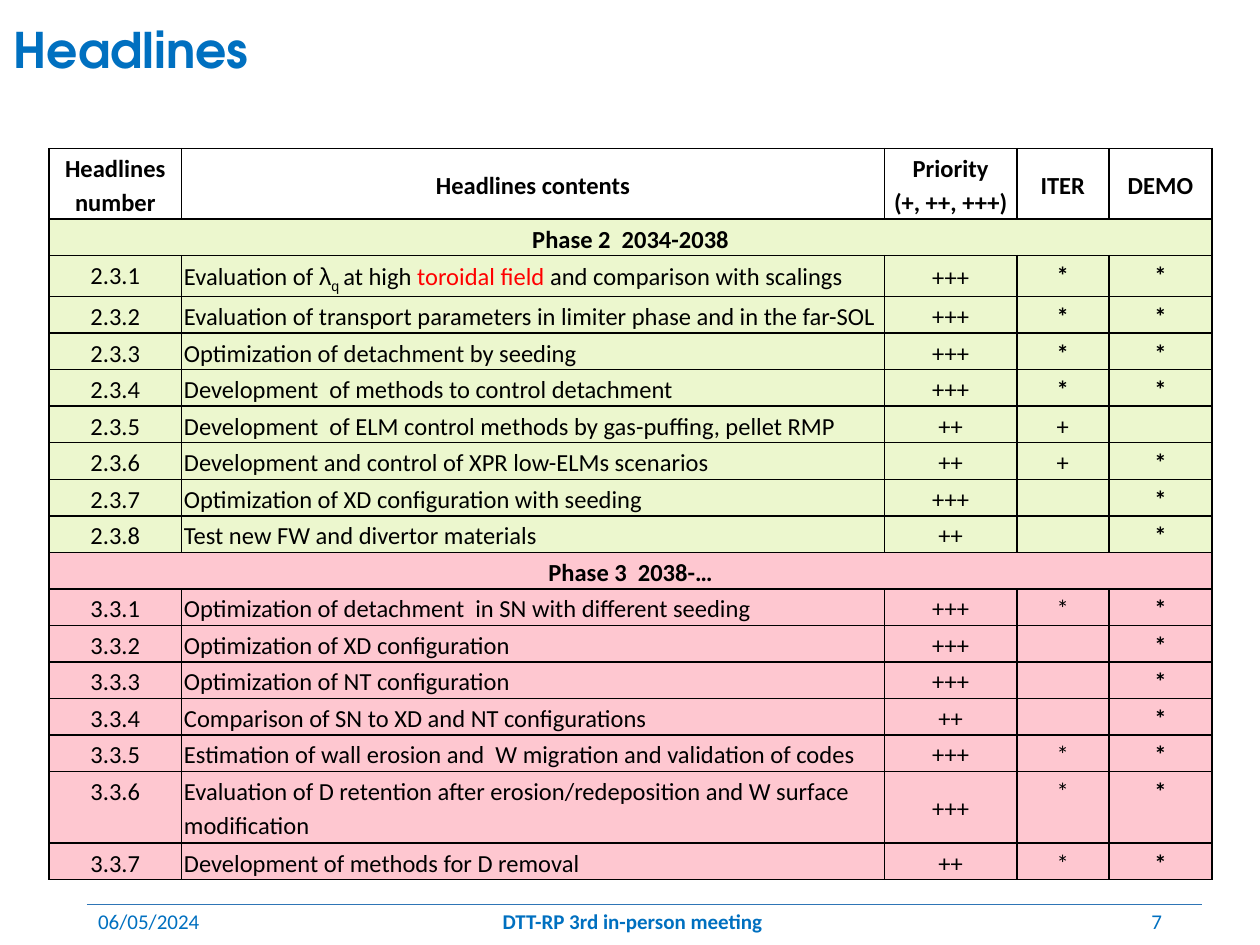
from lxml import etree
from pptx import Presentation
from pptx import util as u
from pptx.dml.color import RGBColor
from pptx.enum import shapes, text
from pptx.oxml import parse_xml
from pptx.oxml.ns import nsdecls, qn

BLUE, RULE, RED, BLACK = "0070C0", "2E75B6", "FF0000", "000000"
GREEN, PINK = "ECF7CE", "FEC7D0"
LEFT, CENTER, RIGHT = (text.PP_ALIGN.LEFT, text.PP_ALIGN.CENTER,
                       text.PP_ALIGN.RIGHT)
TOP, MIDDLE = text.MSO_ANCHOR.TOP, text.MSO_ANCHOR.MIDDLE

HEADINGS = ["Headlines\nnumber", "Headlines contents",
            "Priority\n(+, ++, +++)", "ITER", "DEMO"]
COLUMN_WIDTHS = [1.05, 5.58, 1.05, 0.73, 0.82]
ROW_HEIGHT = 0.29
TALL_ROWS = {"Headlines\nnumber": 0.56, "2.3.1": 0.32, "3.3.6": 0.57}

# Spans are (text, format overrides)
LAMBDA_Q = [
    ("Evaluation of ", {}), ("λ", {"name": "Arial"}),
    ("q ", {"name": "Arial", "baseline": "-25000"}), ("at high", {}),
    (" toroidal field", {"color": RED}),
    (" and comparison with scalings", {})]

# Phase title, fill, whether ITER stars are bold, rows
PHASES = [
    ("Phase 2  2034-2038", GREEN, True, [
        ("2.3.1", LAMBDA_Q, "+++", "*", "*"),
        ("2.3.2", "Evaluation of transport parameters in limiter phase "
                  "and in the far-SOL", "+++", "*", "*"),
        ("2.3.3", "Optimization of detachment by seeding", "+++", "*", "*"),
        ("2.3.4", "Development  of methods to control detachment",
         "+++", "*", "*"),
        ("2.3.5", "Development  of ELM control methods by gas-puffing, "
                  "pellet RMP", "++", "+", ""),
        ("2.3.6", "Development and control of XPR low-ELMs scenarios",
         "++", "+", "*"),
        ("2.3.7", "Optimization of XD configuration with seeding",
         "+++", "", "*"),
        ("2.3.8", "Test new FW and divertor materials", "++", "", "*")]),
    ("Phase 3  2038-…", PINK, False, [
        ("3.3.1", "Optimization of detachment  in SN with different seeding",
         "+++", "*", "*"),
        ("3.3.2", "Optimization of XD configuration", "+++", "", "*"),
        ("3.3.3", "Optimization of NT configuration", "+++", "", "*"),
        ("3.3.4", "Comparison of SN to XD and NT configurations",
         "++", "", "*"),
        ("3.3.5", "Estimation of wall erosion and  W migration and "
                  "validation of codes", "+++", "*", "*"),
        ("3.3.6", "Evaluation of D retention after erosion/redeposition "
                  "and W surface modification", "+++", "*", "*"),
        ("3.3.7", "Development of methods for D removal", "++", "*", "*")]),
]


def rgb(value):
    return RGBColor.from_string(value)


def write(frame, content, align=LEFT, spacing=1.0, **base):
    """Fill a text frame with a string, or with a list of spans."""
    if isinstance(content, str):
        lines = [[(line, {})] for line in content.split("\n")]
    else:
        lines = [content]
    for index, spans in enumerate(lines):
        para = frame.add_paragraph() if index else frame.paragraphs[0]
        para.alignment, para.line_spacing = align, spacing
        for words, changes in spans:
            if not words:  # an empty cell still needs its text size
                end = etree.SubElement(para._p, qn("a:endParaRPr"))
                end.set("sz", str(int(base["size"] * 100)))
                continue
            span = para.add_run()
            span.text = words
            values = {"name": "Calibri", "bold": False, **base, **changes}
            span.font.color.rgb = rgb(values.pop("color"))
            baseline = values.pop("baseline", None)
            values["size"] = u.Pt(values["size"])
            for key, value in values.items():
                setattr(span.font, key, value)
            if baseline:
                span.font._element.set("baseline", baseline)


def add_text(page, box, content, **style):
    frame = page.shapes.add_textbox(*map(u.Inches, box)).text_frame
    frame.word_wrap, frame.vertical_anchor = True, MIDDLE
    write(frame, content, color=BLUE, **style)


def style_cell(cell, fill, anchor):
    borders = cell._tc.get_or_add_tcPr()
    for side in ("lnL", "lnR", "lnT", "lnB"):
        borders.append(parse_xml(
            f'<a:{side} {nsdecls("a")} w="12700"><a:solidFill>'
            f'<a:srgbClr val="{BLACK}"/></a:solidFill></a:{side}>'))
    if fill:
        cell.fill.solid()
        cell.fill.fore_color.rgb = rgb(fill)
    else:
        cell.fill.background()
    margins = {"margin_left": 0.02, "margin_right": 0.02,
               "margin_top": 0.01, "margin_bottom": 0.01}
    for key, value in margins.items():
        setattr(cell, key, u.Inches(value))
    cell.vertical_anchor = anchor


def add_headlines_table(page, left, top):
    # Each row: contents, fill, bold columns, middle-anchored columns
    everything = range(len(HEADINGS))
    rows = [(HEADINGS, None, everything, everything)]
    for title, fill, bold_iter, entries in PHASES:
        rows.append(([title], fill, everything, everything))
        for entry in entries:
            bold = {4} | ({3} if bold_iter and entry[3] == "*" else set())
            rows.append((entry, fill, bold, {2}))

    heights = [TALL_ROWS.get(row[0][0], ROW_HEIGHT) for row in rows]
    table = page.shapes.add_table(
        len(rows), len(HEADINGS), u.Inches(left), u.Inches(top),
        u.Inches(sum(COLUMN_WIDTHS)), u.Inches(sum(heights))).table
    table.first_row = table.horz_banding = False
    for column, width in zip(table.columns, COLUMN_WIDTHS):
        column.width = u.Inches(width)

    for y, (contents, fill, bold, middle) in enumerate(rows):
        table.rows[y].height = u.Inches(heights[y])
        for x in everything:
            style_cell(table.cell(y, x), fill, MIDDLE if x in middle else TOP)
        if len(contents) == 1:  # phase title across the table
            table.cell(y, 0).merge(table.cell(y, len(HEADINGS) - 1))
        for x, content in enumerate(contents):
            align = LEFT if x == 1 and y else CENTER
            write(table.cell(y, x).text_frame, content, align, 1.15,
                  size=14, bold=x in bold, color=BLACK)


def add_footer(page, top):
    rule_y = u.Inches(top + 0.07)
    rule = page.shapes.add_connector(
        shapes.MSO_CONNECTOR.STRAIGHT,
        u.Inches(0.69), rule_y, u.Inches(9.54), rule_y)
    rule.line.color.rgb, rule.line.width = rgb(RULE), u.Pt(0.5)
    etree.SubElement(rule._element.spPr, qn("a:effectLst"))
    for left, width, words, align, bold in [
            (0.68, 2.25, "06/05/2024", LEFT, False),
            (3.33, 3.38, "DTT-RP 3rd in-person meeting", CENTER, True),
            (7.07, 2.25, "7", RIGHT, False)]:
        add_text(page, (left, top, width, 0.4), words,
                 align=align, size=12, bold=bold)


def main():
    deck = Presentation()
    deck.slide_width, deck.slide_height = u.Inches(10), u.Inches(7.5)
    page = deck.slides.add_slide(deck.slide_layouts[6])
    add_footer(page, 7.11)
    add_text(page, (0.01, 0.02, 7.79, 0.79), "Headlines", spacing=0.9,
             name="TeX Gyre Adventor", size=28, bold=True)
    add_headlines_table(page, 0.39, 1.18)
    deck.save("out.pptx")


if __name__ == "__main__":
    main()
